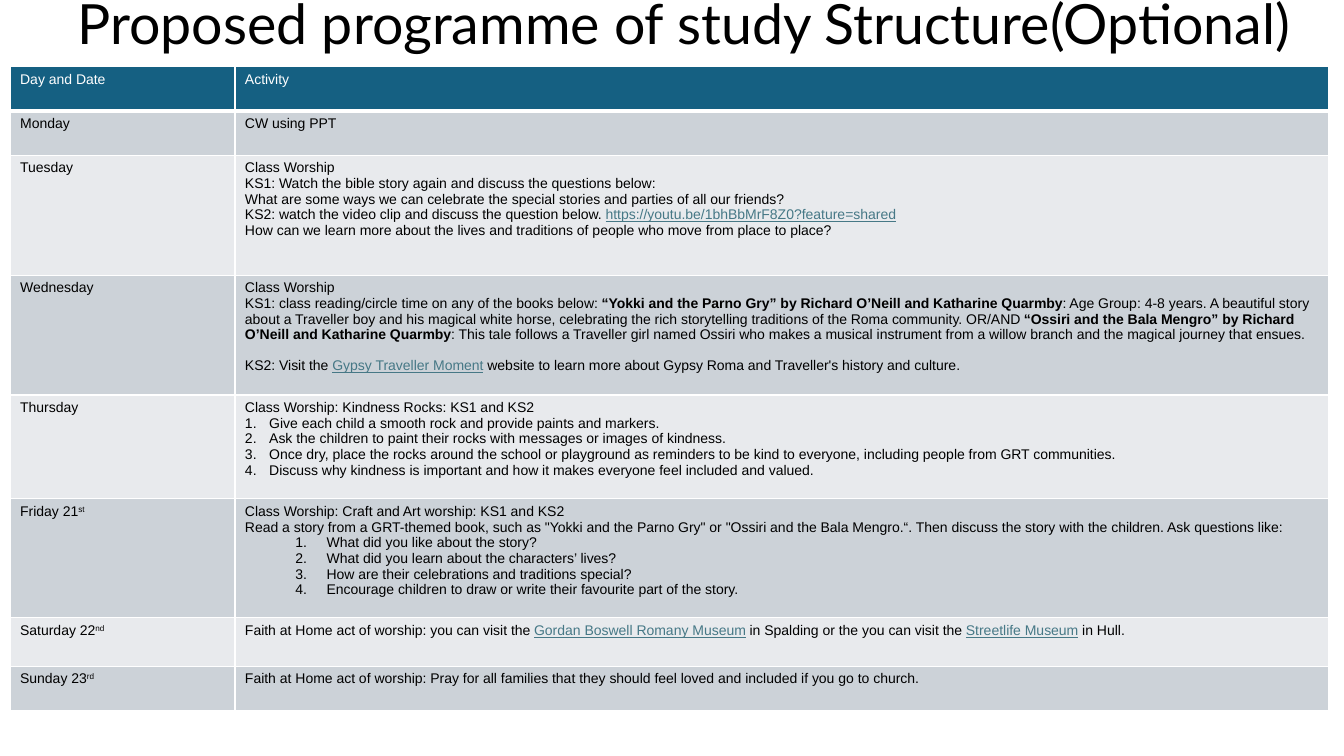
from lxml.etree import SubElement
from pptx import Presentation
from pptx.dml.color import RGBColor
from pptx.enum.text import MSO_ANCHOR, PP_ALIGN
from pptx.oxml.ns import qn
from pptx.util import Inches, Pt

BLACK, WHITE, LINK = "000000", "FFFFFF", "467886"
HEADER, DARK_BAND, LIGHT_BAND = "156082", "CCD2D8", "E8EAED"
COLUMN_WIDTHS = [2.23, 10.85]
ROW_HEIGHTS = [0.44, 0.44, 1.19, 1.19, 1.03, 1.18, 0.48, 0.44]
STYLES = {
    "plain": {},
    "bold": {"bold": True},
    "link": {"underline": True},
    "super": {},
}
STEP = {"margin": 0.24, "hanging": 0.24, "level": 0}
QUESTION = {"margin": 0.81, "hanging": 0.31, "level": 1}


def numbered(kind, *lines):
    return [(line, kind) for line in lines]


ROWS = [
    (["Day and Date"], ["Activity"]),
    (["Monday"], ["CW using PPT"]),
    (["Tuesday"], [
        "Class Worship",
        "KS1: Watch the bible story again and discuss the questions below:",
        "What are some ways we can celebrate the special stories and parties of all our friends?",
        ["KS2: watch the video clip and discuss the question below. ",
         ("https://youtu.be/1bhBbMrF8Z0?feature=shared", "link")],
        "How can we learn more about the lives and traditions of people who move from place to place?",
    ]),
    (["Wednesday"], [
        "Class Worship",
        ["KS1: class reading/circle time on any of the books below: ",
         ("“Yokki and the Parno Gry” by Richard O’Neill and Katharine Quarmby", "bold"),
         ": Age Group: 4-8 years. A beautiful story about a Traveller boy and his magical white horse, "
         "celebrating the rich storytelling traditions of the Roma community. OR/AND ",
         ("“Ossiri and the Bala Mengro” by Richard O’Neill and Katharine Quarmby", "bold"),
         ": This tale follows a Traveller girl named Ossiri who makes a musical instrument "
         "from a willow branch and the magical journey that ensues."],
        (["KS2: Visit the ", ("Gypsy Traveller Moment", "link"),
          " website to learn more about Gypsy Roma and Traveller's history and culture."],
         {"space": 11.2}),
    ]),
    (["Thursday"], [
        "Class Worship: Kindness Rocks: KS1 and KS2",
        *numbered(
            STEP,
            "Give each child a smooth rock and provide paints and markers.",
            "Ask the children to paint their rocks with messages or images of kindness.",
            "Once dry, place the rocks around the school or playground as reminders to be kind "
            "to everyone, including people from GRT communities.",
            "Discuss why kindness is important and how it makes everyone feel included and valued."),
    ]),
    ([["Friday 21", ("st", "super")]], [
        "Class Worship: Craft and Art worship: KS1 and KS2",
        'Read a story from a GRT-themed book, such as "Yokki and the Parno Gry" or '
        '"Ossiri and the Bala Mengro.“. Then discuss the story with the children. Ask questions like:',
        *numbered(
            QUESTION,
            "What did you like about the story?",
            "What did you learn about the characters’ lives?",
            "How are their celebrations and traditions special?",
            "Encourage children to draw or write their favourite part of the story."),
    ]),
    ([["Saturday 22", ("nd", "super")]], [
        ["Faith at Home act of worship: you can visit the ",
         ("Gordan Boswell Romany Museum", "link"),
         " in Spalding or the you can visit the ",
         ("Streetlife Museum", "link"), " in Hull."],
    ]),
    ([["Sunday 23", ("rd", "super")]], [
        "Faith at Home act of worship: Pray for all families that they should feel loved "
        "and included if you go to church.",
    ]),
]


def color(value):
    return RGBColor.from_string(value)


def add_span(para, text, ink, **values):
    span = para.add_run()
    span.text = text
    for name, value in values.items():
        setattr(span.font, name, value)
    span.font.color.rgb = color(ink)
    return span


def number_paragraph(para, margin, hanging, level):
    para.level = level
    properties = para._p.get_or_add_pPr()
    properties.set("marL", str(Inches(margin)))
    properties.set("indent", str(-Inches(hanging)))
    ink = SubElement(properties, qn("a:buClr"))
    SubElement(ink, qn("a:srgbClr"), val=BLACK)
    SubElement(properties, qn("a:buFont"), typeface="Arial")
    SubElement(properties, qn("a:buAutoNum"), type="arabicPeriod")


def fill_paragraph(para, content, ink):
    spans, layout = content if isinstance(content, tuple) else (content, {})
    if "margin" in layout:
        number_paragraph(para, **layout)
    if "space" in layout:
        para.space_before = Pt(layout["space"])
    for item in [spans] if isinstance(spans, str) else spans:
        text, style = (item, "plain") if isinstance(item, str) else item
        values = {"size": Pt(10), "name": "Arial", "bold": False} | STYLES[style]
        span = add_span(para, text, LINK if style == "link" else ink, **values)
        if style == "super":
            span._r.get_or_add_rPr().set("baseline", "30000")


def add_borders(cell, bottom):
    properties = cell._tc.get_or_add_tcPr()
    for side, width in {"L": 1, "R": 1, "T": 1, "B": bottom}.items():
        line = SubElement(properties, qn(f"a:ln{side}"), w=str(Pt(width)))
        fill = SubElement(line, qn("a:solidFill"))
        SubElement(fill, qn("a:srgbClr"), val=WHITE)


def fill_cell(cell, paragraphs, back, ink, bottom):
    add_borders(cell, bottom)
    cell.fill.solid()
    cell.fill.fore_color.rgb = color(back)
    frame = cell.text_frame
    for index, content in enumerate(paragraphs):
        para = frame.add_paragraph() if index else frame.paragraphs[0]
        fill_paragraph(para, content, ink)


def add_title(page, text):
    box = page.shapes.add_textbox(Inches(0.39), Inches(0), Inches(12.79), Inches(0.53))
    frame = box.text_frame
    frame.word_wrap = True
    frame.vertical_anchor = MSO_ANCHOR.MIDDLE
    para = frame.paragraphs[0]
    para.alignment = PP_ALIGN.CENTER
    para.line_spacing = 0.9
    add_span(para, text, BLACK, size=Pt(39.6), name="Lato")


def add_programme(page):
    frame = page.shapes.add_table(
        len(ROWS), len(COLUMN_WIDTHS), Inches(0.1), Inches(0.66),
        Inches(sum(COLUMN_WIDTHS)), Inches(sum(ROW_HEIGHTS)))
    table = frame.table
    for column, width in zip(table.columns, COLUMN_WIDTHS):
        column.width = Inches(width)
    for index, (row, height, contents) in enumerate(zip(table.rows, ROW_HEIGHTS, ROWS)):
        row.height = Inches(height)
        band = DARK_BAND if index % 2 else LIGHT_BAND
        back, ink, bottom = (band, BLACK, 1) if index else (HEADER, WHITE, 3)
        for cell, paragraphs in zip(row.cells, contents):
            fill_cell(cell, paragraphs, back, ink, bottom)


def main():
    deck = Presentation()
    deck.slide_width, deck.slide_height = Inches(13.33), Inches(7.5)
    page = deck.slides.add_slide(deck.slide_layouts[6])
    add_title(page, "Proposed programme of study Structure(Optional)")
    add_programme(page)
    deck.save("out.pptx")


if __name__ == "__main__":
    main()
